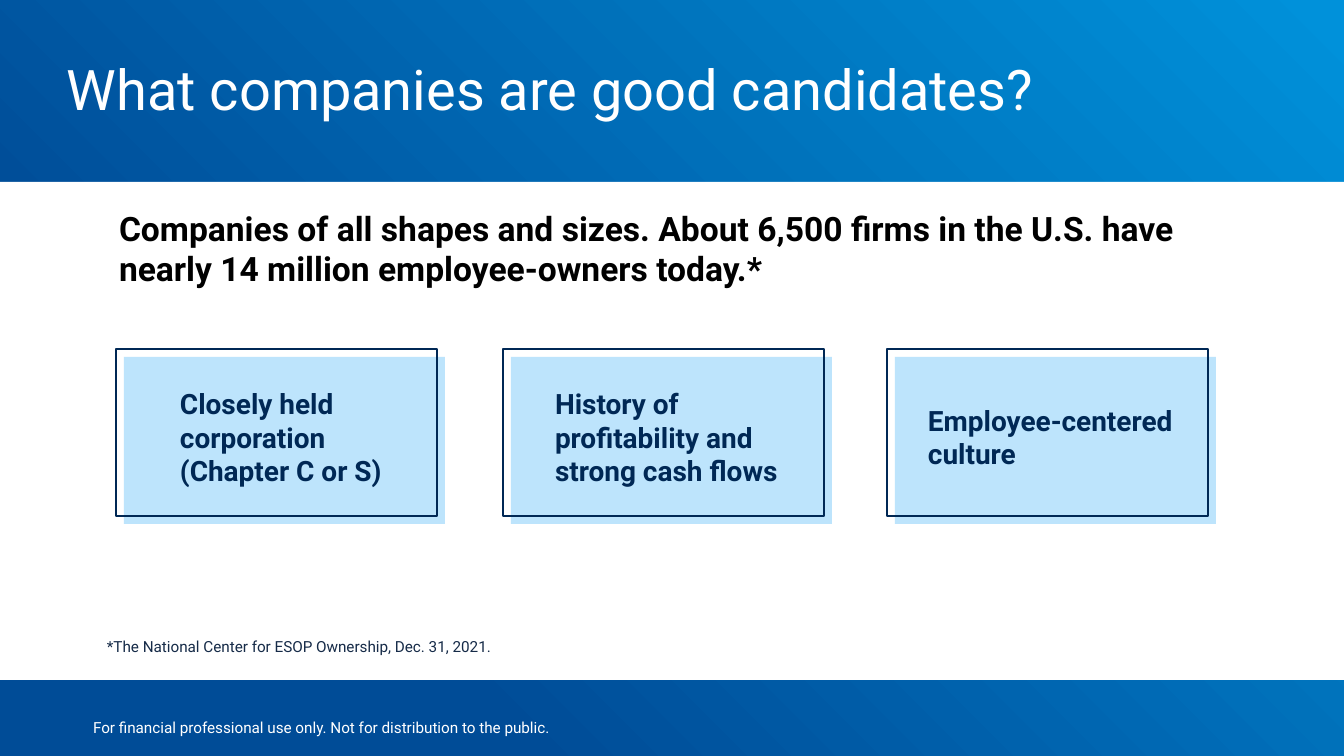
"""Builds the slide on which companies are good candidates."""
import pptx
import pptx.util
from pptx.dml.color import RGBColor
from pptx.enum.shapes import MSO_SHAPE
from pptx.enum.text import MSO_ANCHOR, PP_ALIGN

SCALE = 914400 / 134.4
WIDE, HIGH = 1344, 756
WHITE, NAVY, SKY = "FFFFFF", "002855", "BDE4FC"
CARDS = [
    (116, 167, 245, "Closely held corporation (Chapter C or S)"),
    (503, 542, 253, "History of profitability and strong cash flows"),
    (887, 915, 277, "Employee-centered culture"),
]


def px(*nums):
    """Turn px lengths into EMU."""
    return [round(num * SCALE) for num in nums]


def tint(code):
    """Turn a hex string into a colour."""
    return RGBColor.from_string(code)


def add_box(slide, area, fill=None, line=None):
    """Add a plain rectangle with an optional fill and outline."""
    box = slide.shapes.add_shape(MSO_SHAPE.RECTANGLE, *px(*area))
    box.shadow.inherit = False
    if fill:
        box.fill.solid()
        box.fill.fore_color.rgb = tint(fill)
    else:
        box.fill.background()
    if line:
        box.line.color.rgb = tint(line)
        box.line.width = pptx.util.Pt(1.25)
    else:
        box.line.fill.background()
    return box


def add_text(slide, area, text, size, color, bold=False,
             align=PP_ALIGN.LEFT, anchor=MSO_ANCHOR.TOP, inset=(13, 7)):
    """Add a wrapped text box in one format."""
    frame = slide.shapes.add_textbox(*px(*area)).text_frame
    frame.word_wrap = True
    frame.vertical_anchor = anchor
    frame.margin_left, frame.margin_top = px(*inset)
    frame.margin_right, frame.margin_bottom = px(*inset)
    para = frame.paragraphs[0]
    para.alignment = align
    run = para.add_run()
    run.text = text
    run.font.name = "Roboto"
    run.font.size = pptx.util.Pt(size)
    run.font.bold = bold
    run.font.color.rgb = tint(color)


def add_back(slide):
    """Add the blue gradient and the white band over it."""
    fill = add_box(slide, (0, 0, WIDE, HIGH)).fill
    fill.gradient()
    fill.gradient_angle = 45
    stops = [(0.25, "004C97"), (0.99, "0091DA")]
    for stop, (place, code) in zip(fill.gradient_stops, stops):
        stop.position = place
        stop.color.rgb = tint(code)
    add_box(slide, (0, 182, WIDE, 498), fill=WHITE)


def add_card(slide, left, start, width, text):
    """Add a pale card, its label and its shifted outline."""
    add_box(slide, (left + 8, 357, 321, 167), fill=SKY)
    add_text(slide, (start, 376, width, 122), text, 15, NAVY, bold=True,
             anchor=MSO_ANCHOR.MIDDLE)
    add_box(slide, (left, 349, 321, 167), line=NAVY)


def main():
    """Build and save the slide."""
    deck = pptx.Presentation()
    deck.slide_width, deck.slide_height = px(WIDE, HIGH)
    slide = deck.slides.add_slide(deck.slide_layouts[6])
    add_back(slide)
    add_text(slide, (67, 55, 1210, 91), "What companies are good candidates?",
             30, WHITE, inset=(0, 0))
    add_text(slide, (0, 707, 643, 40),
             "For financial professional use only. "
             "Not for distribution to the public.",
             8.2, WHITE, align=PP_ALIGN.CENTER, anchor=MSO_ANCHOR.MIDDLE)
    add_text(slide, (106, 201, 1152, 117),
             "Companies of all shapes and sizes. About 6,500 firms in the "
             "U.S. have nearly 14 million employee-owners today.*",
             18, "000000", bold=True)
    for card in CARDS:
        add_card(slide, *card)
    add_text(slide, (94, 630, 1008, 33),
             "*The National Center for ESOP Ownership, Dec. 31, 2021.",
             8.2, "162B48", anchor=MSO_ANCHOR.BOTTOM)
    deck.save("out.pptx")


if __name__ == "__main__":
    main()
